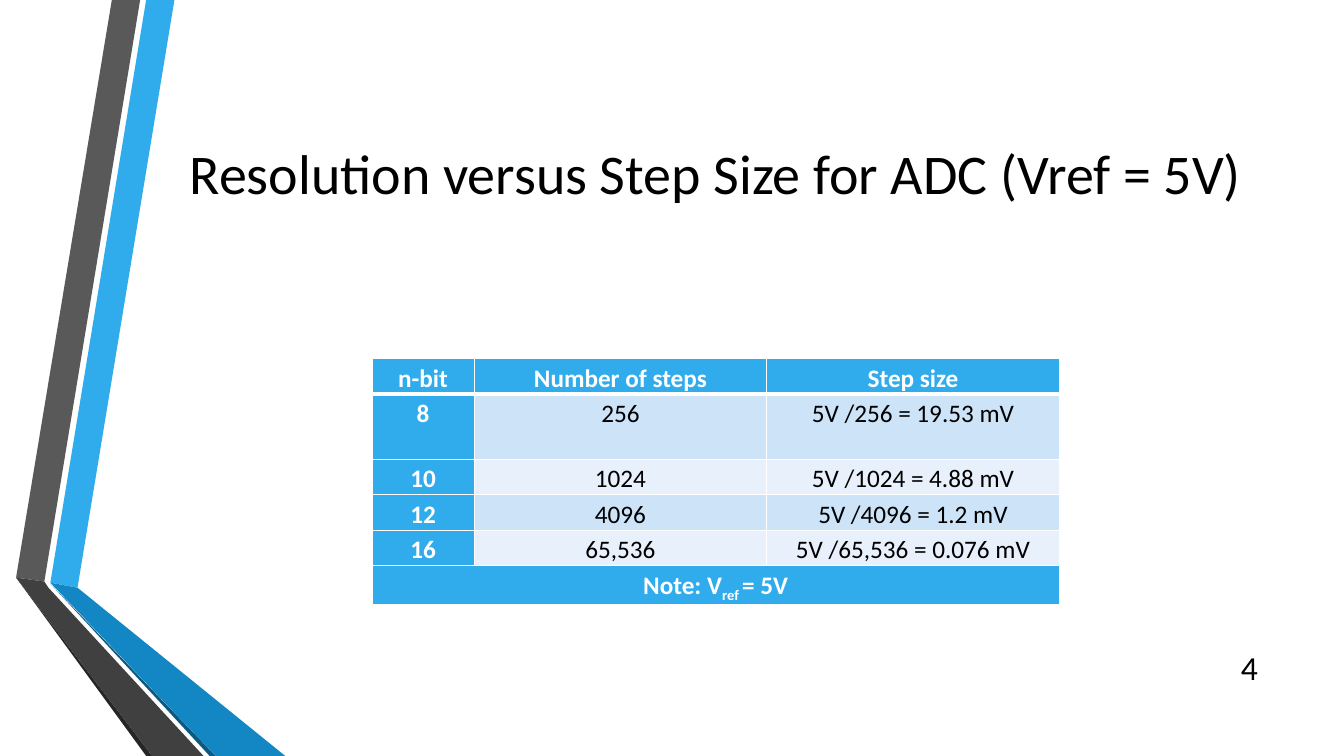
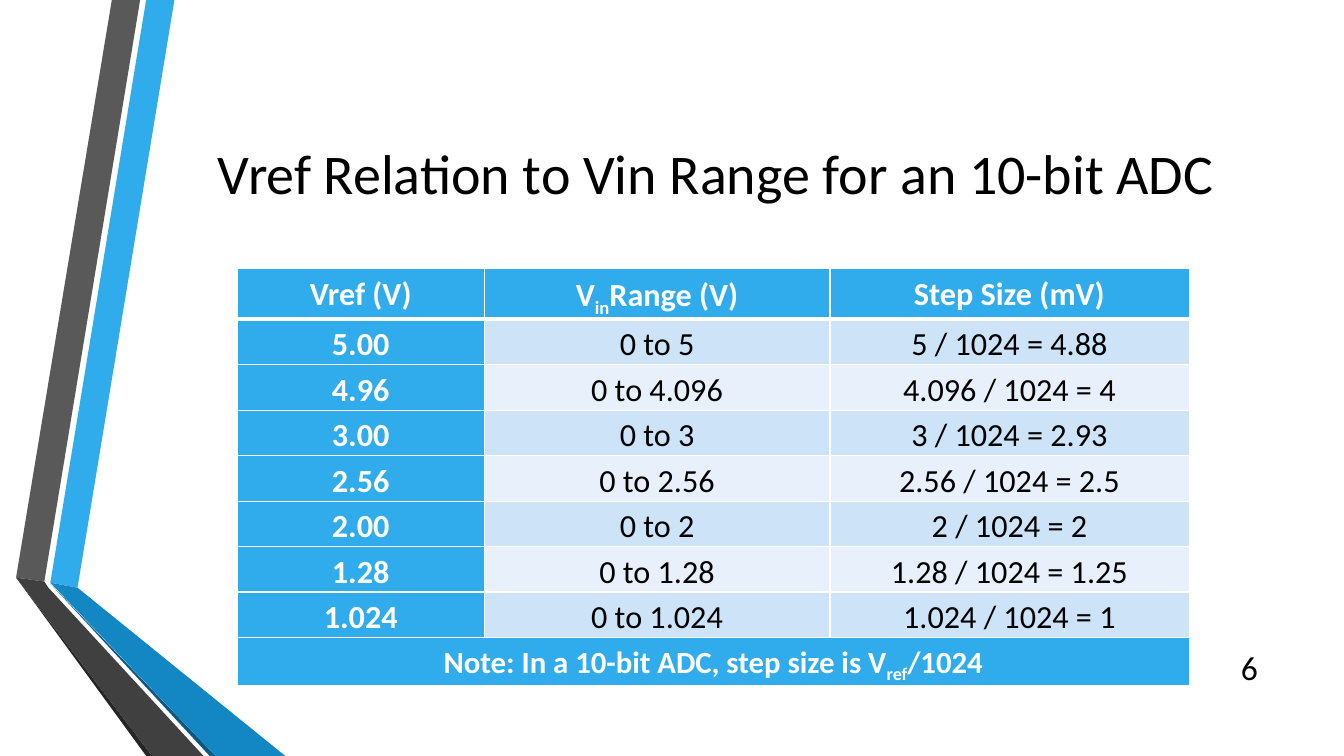
"""Build two slides about analogue-to-digital converter resolution."""
from dataclasses import dataclass

from lxml import etree
from pptx import Presentation
from pptx.dml.color import RGBColor
from pptx.enum.text import MSO_ANCHOR, MSO_AUTO_SIZE, PP_ALIGN
from pptx.oxml.ns import qn
from pptx.util import Pt

CENTER = PP_ALIGN.CENTER
RIGHT = PP_ALIGN.RIGHT
TOP = MSO_ANCHOR.TOP
MIDDLE = MSO_ANCHOR.MIDDLE
NO_AUTOFIT = MSO_AUTO_SIZE.NONE

FONT = "Calibri"
BLACK = "000000"
WHITE = "FFFFFF"
BLUE = "30ACEC"
BAND_FILLS = ("CDE3F8", "E8F1FB")
SUBSCRIPT_BASELINE = "-25000"
TITLE_ONLY = 5


@dataclass(frozen=True)
class Ribbon:
    """A filled outline at the left edge, with its corners in points."""

    fill: str
    corners: tuple[tuple[float, float], ...]


@dataclass(frozen=True)
class TableSlide:
    """One slide; bars in a cell text enclose a subscript."""

    title: str
    number: str
    left: float
    top: float
    widths: tuple[float, ...]
    heights: tuple[float, ...]
    margin: float
    size: float
    note_size: float
    rows: tuple[tuple[str, ...], ...]
    note: str


RIBBONS = (
    Ribbon(BLUE, ((36, 416.2), (55.4, 419.8), (124.6, 0), (104.4, 0))),
    Ribbon("595959", ((100.1, 0), (79.9, 0), (11.5, 412.6), (31.7, 415.4))),
    Ribbon("262626", ((11.5, 412.6), (104.4, 540), (108.7, 540))),
    Ribbon("0C5A82", ((36, 416.9), (149.8, 540), (154.1, 540))),
    Ribbon("1287C3", ((36, 416.2), (154.1, 540), (203.8, 540), (55.4, 419.8))),
    Ribbon("404040", ((145.4, 540), (34.6, 419.8), (31.7, 415.4),
                      (11.5, 412.6), (108.7, 540))),
)

SLIDES = (
    TableSlide(
        title="Resolution versus Step Size for ADC (Vref = 5V)",
        number="4",
        left=265.7, top=256.3,
        widths=(73, 209, 209),
        heights=(25.2, 46.5, 25.2, 25.2, 25.2, 27.5),
        margin=5, size=18, note_size=18,
        rows=(
            ("n-bit", "Number of steps", "Step size"),
            ("8", "256", "5V /256 = 19.53 mV"),
            ("10", "1024", "5V /1024 = 4.88 mV"),
            ("12", "4096", "5V /4096 = 1.2 mV"),
            ("16", "65,536", "5V /65,536 = 0.076 mV"),
        ),
        note="Note: V|ref |= 5V",
    ),
    TableSlide(
        title="Vref Relation to Vin Range for an 10-bit ADC",
        number="6",
        left=169.5, top=192,
        widths=(176.4, 247, 256.5),
        heights=(35.7, *[32.5] * 7, 33.6),
        margin=11.5, size=23, note_size=22,
        rows=(
            ("Vref (V)", "V|in|Range (V)", "Step Size (mV)"),
            ("5.00", "0 to 5", "5 / 1024 = 4.88"),
            ("4.96", "0 to 4.096", "4.096 / 1024 = 4"),
            ("3.00", "0 to 3", "3 / 1024 = 2.93"),
            ("2.56", "0 to 2.56", "2.56 / 1024 = 2.5"),
            ("2.00", "0 to 2", "2 / 1024 = 2"),
            ("1.28", "0 to 1.28", "1.28 / 1024 = 1.25"),
            ("1.024", "0 to 1.024", "1.024 / 1024 = 1"),
        ),
        note="Note: In a 10-bit ADC, step size is V|ref|/1024",
    ),
)


def color(value: str) -> RGBColor:
    """Return the colour for a hex string."""
    return RGBColor.from_string(value)


def write(para, text: str, size: float, ink: str, align, bold: bool = False) -> None:
    """Fill a paragraph, lowering the parts between bars."""
    para.alignment = align
    para.font.name = FONT
    para.font.size = Pt(size)
    para.font.bold = bold
    para.font.color.rgb = color(ink)
    for index, part in enumerate(text.split("|")):
        span = para.add_run()
        span.text = part
        if index % 2:
            span._r.get_or_add_rPr().set("baseline", SUBSCRIPT_BASELINE)


def draw_ribbon(page, ribbon: Ribbon) -> None:
    """Draw one ribbon as a closed outline."""
    start, *others = [(Pt(x), Pt(y)) for x, y in ribbon.corners]
    builder = page.shapes.build_freeform(*start)
    builder.add_line_segments(others, close=True)
    shape = builder.convert_to_shape()
    shape.shadow.inherit = False
    shape.fill.solid()
    shape.fill.fore_color.rgb = color(ribbon.fill)
    shape.line.fill.background()


def place_text(box, at: tuple[float, ...], text: str, size: float, align) -> None:
    """Position a box and write its single, vertically centred line."""
    box.left, box.top, box.width, box.height = map(Pt, at)
    frame = box.text_frame
    frame.word_wrap = True
    frame.auto_size = NO_AUTOFIT
    frame.vertical_anchor = MIDDLE
    write(frame.paragraphs[0], text, size, BLACK, align)


def add_borders(cell, top: float, bottom: float) -> None:
    """Give a cell white borders of the given widths in points."""
    properties = cell._tc.get_or_add_tcPr()
    for side, width in (("L", 1), ("R", 1), ("T", top), ("B", bottom)):
        line = etree.SubElement(properties, qn(f"a:ln{side}"), w=str(Pt(width)))
        fill = etree.SubElement(line, qn("a:solidFill"))
        etree.SubElement(fill, qn("a:srgbClr"), val=WHITE)


def format_cell(cell, content: TableSlide, row: int, column: int) -> None:
    """Style one cell by its place in the table."""
    is_note = row == len(content.rows)
    is_accent = is_note or row == 0 or column == 0
    add_borders(cell, 3 if row == 1 else 1, 3 if row == 0 else 1)
    cell.fill.solid()
    cell.fill.fore_color.rgb = color(BLUE if is_accent else BAND_FILLS[(row - 1) % 2])
    cell.margin_left = cell.margin_right = Pt(content.margin)
    cell.margin_top = cell.margin_bottom = Pt(0)
    cell.vertical_anchor = TOP
    if is_note and column:
        return
    para = cell.text_frame.paragraphs[0]
    para.line_spacing = 1.15
    text = content.note if is_note else content.rows[row][column]
    size = content.note_size if is_note else content.size
    write(para, text, size, WHITE if is_accent else BLACK, CENTER, is_accent)


def draw_table(page, content: TableSlide) -> None:
    """Draw the table with a merged note row at its foot."""
    widths, heights = content.widths, content.heights
    table = page.shapes.add_table(
        len(heights), len(widths), Pt(content.left), Pt(content.top),
        Pt(sum(widths)), Pt(sum(heights))).table
    table.first_row = table.horz_banding = False
    for column, width in zip(table.columns, widths):
        column.width = Pt(width)
    for row, height in zip(table.rows, heights):
        row.height = Pt(height)
    last = len(heights) - 1
    table.cell(last, 0).merge(table.cell(last, len(widths) - 1))
    for row in range(len(heights)):
        for column in range(len(widths)):
            format_cell(table.cell(row, column), content, row, column)


def add_page(deck, content: TableSlide) -> None:
    """Add one slide with ribbons, title, number and table."""
    page = deck.slides.add_slide(deck.slide_layouts[TITLE_ONLY])
    for ribbon in RIBBONS:
        draw_ribbon(page, ribbon)
    place_text(page.shapes.title, (116.6, 54, 789, 138), content.title, 40, CENTER)
    number_at = (862.5, 462.2, 43.2, 28.8)
    number_box = page.shapes.add_textbox(*map(Pt, number_at))
    place_text(number_box, number_at, content.number, 24, RIGHT)
    draw_table(page, content)


def main() -> None:
    """Build and save the deck."""
    deck = Presentation()
    deck.slide_width, deck.slide_height = Pt(960), Pt(540)
    for content in SLIDES:
        add_page(deck, content)
    deck.save("out.pptx")


if __name__ == "__main__":
    main()
